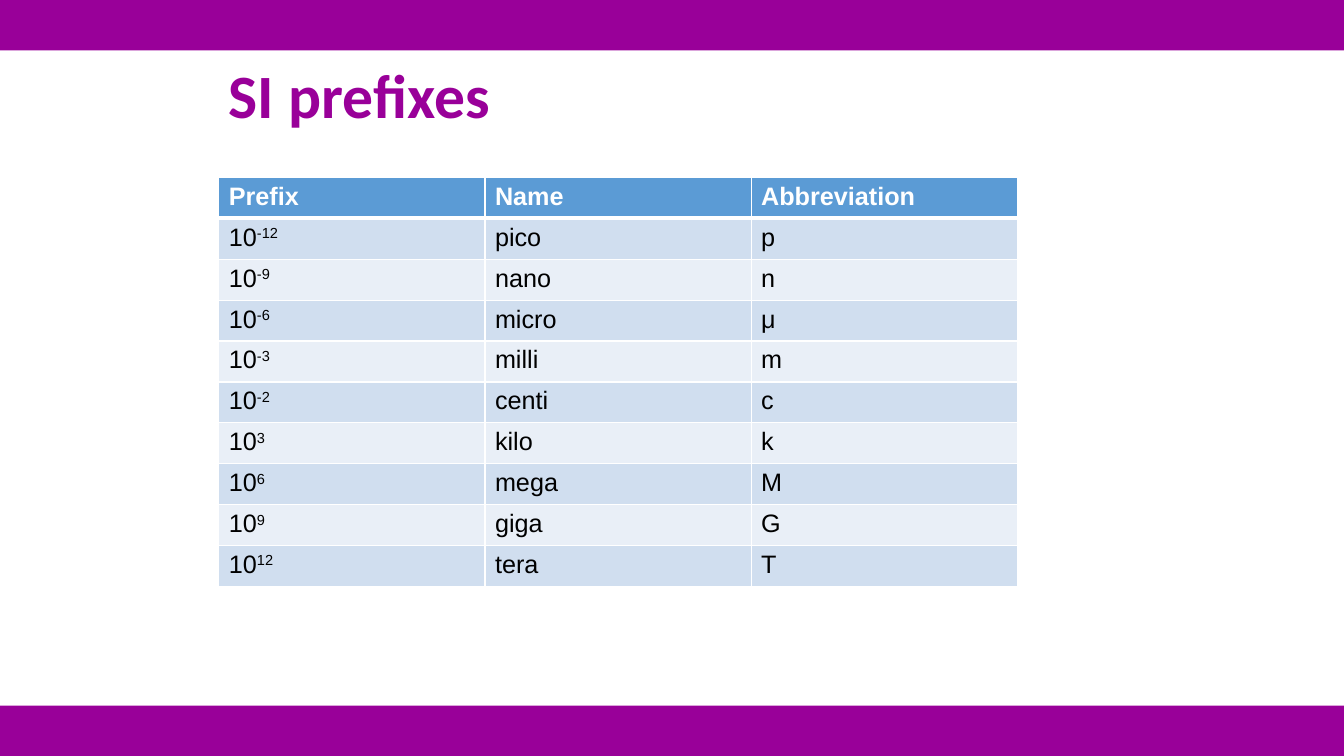
import pptx
import pptx.dml.color
import pptx.enum.shapes
import pptx.enum.text
import pptx.oxml
import pptx.oxml.ns
import pptx.util

# Content
TITLE = "SI prefixes"
HEADINGS = ("Prefix", "Name", "Abbreviation")
PREFIXES = [  # exponent of ten, name, abbreviation
    ("-12", "pico", "p"),
    ("-9", "nano", "n"),
    ("-6", "micro", "μ"),
    ("-3", "milli", "m"),
    ("-2", "centi", "c"),
    ("3", "kilo", "k"),
    ("6", "mega", "M"),
    ("9", "giga", "G"),
    ("12", "tera", "T"),
]
COLOURS = {
    "purple": "990099",
    "heading": "5B9BD5",
    "odd": "D0DEEF",
    "even": "E9EFF7",
    "white": "FFFFFF",
    "black": "000000",
}

# Layout in inches
SLIDE_W, SLIDE_H = 13.33, 7.5
BAND_H = SLIDE_H / 15
LEFT = 2.17
TABLE_TOP = 1.76
COLUMN_W, ROW_H = 2.64, 0.406


def inches(*lengths):
    return [pptx.util.Inches(length) for length in lengths]


def colour(name):
    return pptx.dml.color.RGBColor.from_string(COLOURS[name])


def style(font, face, size, name, bold):
    font.name, font.size, font.bold = face, pptx.util.Pt(size), bold
    font.color.rgb = colour(name)


def add_borders(cell, widths):
    properties = cell._tc.get_or_add_tcPr()
    for side, width in widths.items():
        properties.append(pptx.oxml.parse_xml(
            f'<a:ln{side} {pptx.oxml.ns.nsdecls("a")} w="{pptx.util.Pt(width)}">'
            f'<a:solidFill><a:srgbClr val="{COLOURS["white"]}"/></a:solidFill>'
            f'</a:ln{side}>'))


presentation = pptx.Presentation()
presentation.slide_width, presentation.slide_height = inches(SLIDE_W, SLIDE_H)
slide = presentation.slides.add_slide(presentation.slide_layouts[5])

# Bands along the top and bottom edges
for band_top in (SLIDE_H - BAND_H, 0):
    band = slide.shapes.add_shape(
        pptx.enum.shapes.MSO_SHAPE.RECTANGLE, *inches(0, band_top, SLIDE_W, BAND_H))
    band.shadow.inherit = False
    band.fill.solid()
    band.fill.fore_color.rgb = colour("purple")
    band.line.fill.background()

# Title
title = slide.shapes.title
title.left, title.top, title.width, title.height = inches(
    LEFT, 0.35, len(HEADINGS) * COLUMN_W, 1.25)
title.text_frame.text = TITLE
title.text_frame.vertical_anchor = pptx.enum.text.MSO_ANCHOR.MIDDLE
heading = title.text_frame.paragraphs[0]
heading.alignment = pptx.enum.text.PP_ALIGN.LEFT
heading.line_spacing = 0.9
style(heading.font, "Calibri", 44, "purple", True)

# Table of prefixes
rows = [HEADINGS] + PREFIXES
table = slide.shapes.add_table(
    len(rows), len(HEADINGS),
    *inches(LEFT, TABLE_TOP, len(HEADINGS) * COLUMN_W, len(rows) * ROW_H)).table

for row_index, row in enumerate(rows):
    is_heading = row_index == 0
    fill = "heading" if is_heading else ("even", "odd")[row_index % 2]
    widths = {"L": 1, "R": 1, "T": 3 if row_index == 1 else 1, "B": 3 if is_heading else 1}
    for column_index, text in enumerate(row):
        cell = table.cell(row_index, column_index)
        add_borders(cell, widths)
        cell.fill.solid()
        cell.fill.fore_color.rgb = colour(fill)
        entry = cell.text_frame.paragraphs[0]
        style(entry.font, "Arial", 18, "white" if is_heading else "black", is_heading)
        if column_index == 0 and not is_heading:
            entry.add_run().text = "10"
            exponent = entry.add_run()
            exponent.text = text
            exponent._r.get_or_add_rPr().set("baseline", "30000")
        else:
            entry.add_run().text = text

presentation.save("out.pptx")
